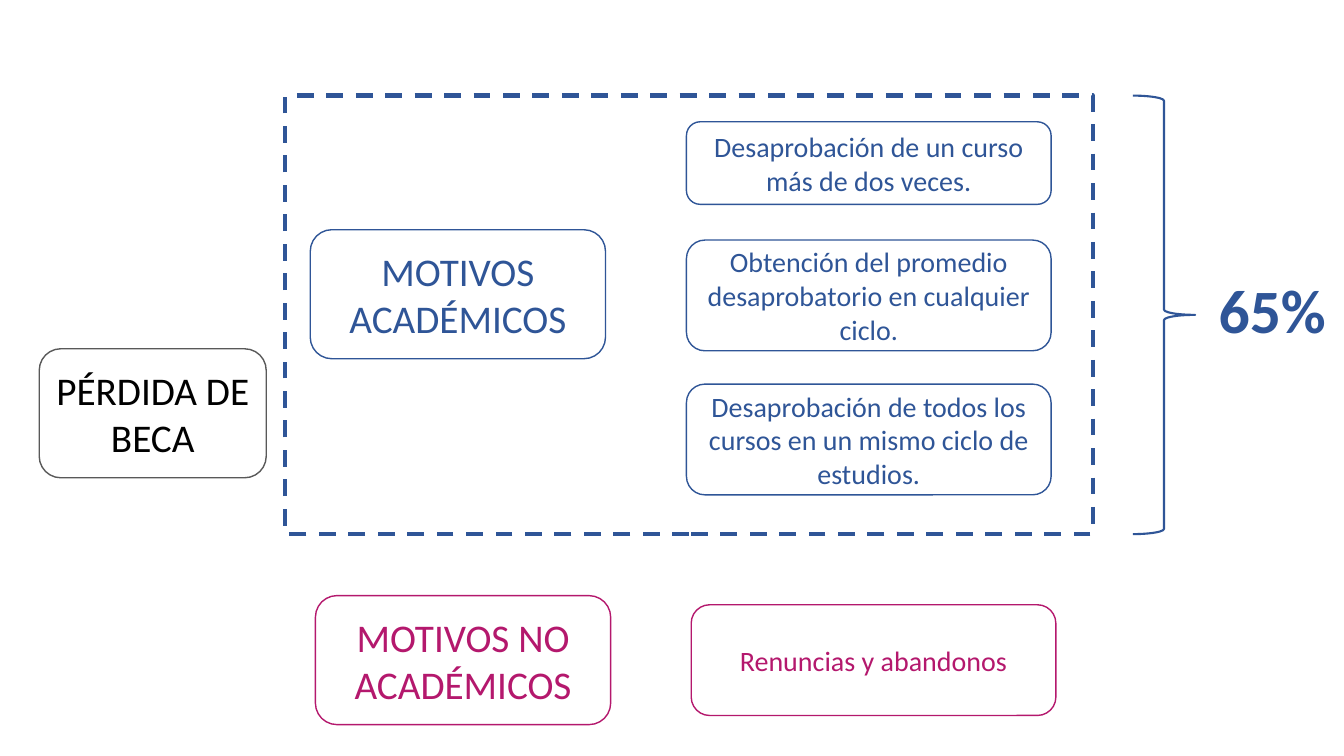
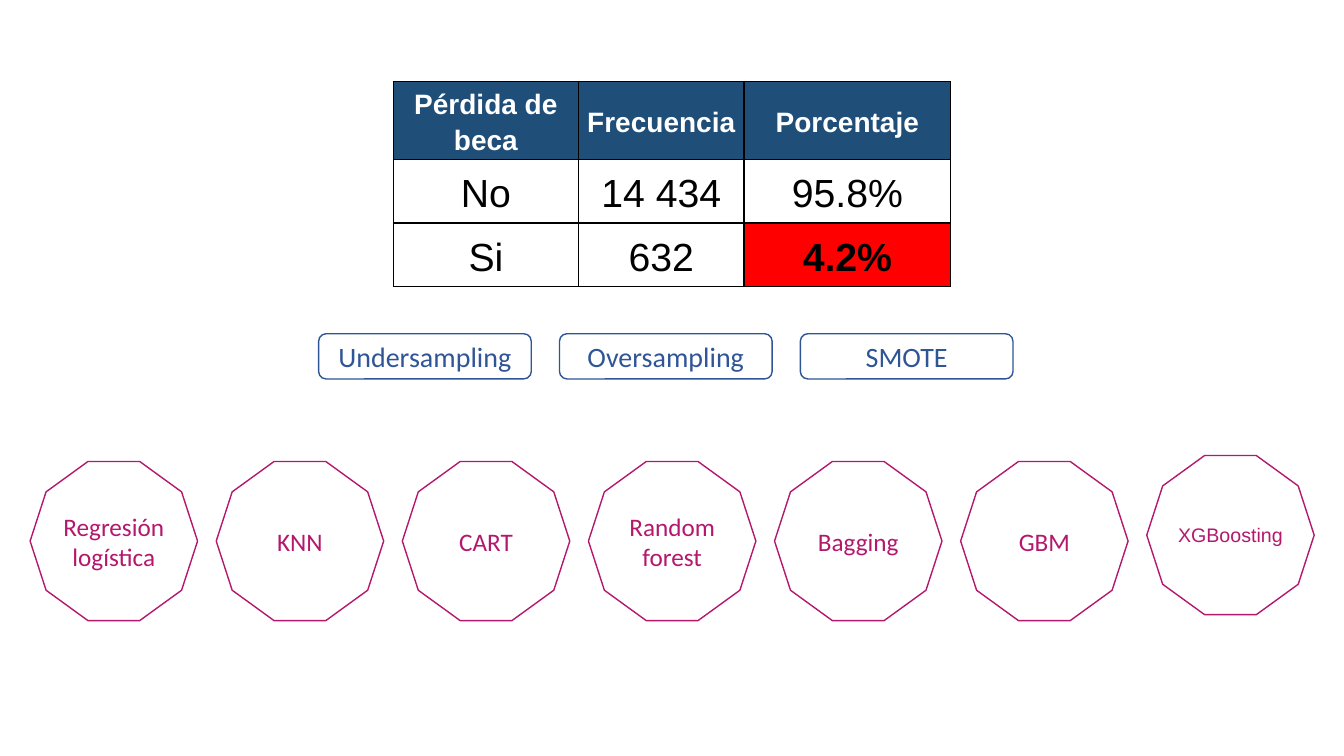
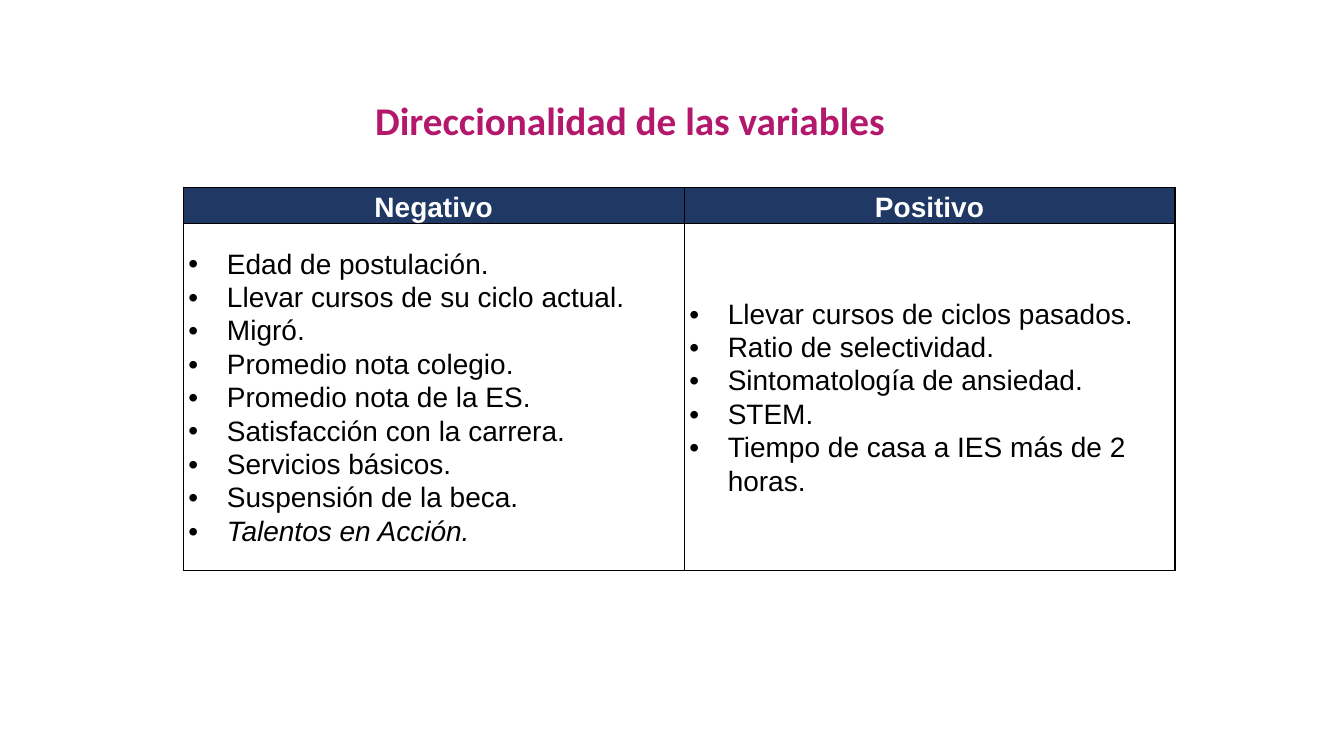
"""Build three slides on scholarship loss: its reasons, the models and the variables."""
from dataclasses import dataclass

from lxml.etree import SubElement
from pptx import Presentation
from pptx.dml.color import RGBColor
from pptx.enum.dml import MSO_LINE
from pptx.enum.shapes import MSO_SHAPE
from pptx.enum.text import MSO_ANCHOR, PP_ALIGN
from pptx.oxml.ns import qn
from pptx.util import Cm, Pt


@dataclass(frozen=True)
class Theme:
    blue: str = "2F5597"
    magenta: str = "B4186D"
    gray: str = "595959"
    black: str = "000000"
    white: str = "FFFFFF"
    red: str = "FF0000"
    frequency_header: str = "1F4E79"
    direction_header: str = "1F3864"
    figure: int = 44
    heading: int = 28
    body: int = 20
    label: int = 18
    small: int = 14
    shape_font: str = "Calibri"
    table_font: str = "Arial"


theme = Theme()


def write_paragraph(paragraph, text, color, font, layout):
    for name, value in layout.items():
        setattr(paragraph, name, value)
    run = paragraph.add_run()
    run.text = text
    for name, value in font.items():
        setattr(run.font, name, value)
    run.font.color.rgb = RGBColor.from_string(color)


def add_box(slide, preset, position, color, text="", size=theme.body, text_color=None,
            font_name=theme.shape_font, line_width=1):
    shape = slide.shapes.add_shape(preset, *map(Cm, position))
    shape.shadow.inherit = False
    shape.fill.background()
    shape.line.color.rgb = RGBColor.from_string(color)
    shape.line.width = Pt(line_width)
    if text:
        shape.text_frame.vertical_anchor = MSO_ANCHOR.MIDDLE
        write_paragraph(shape.text_frame.paragraphs[0], text, text_color or color,
                        {"name": font_name, "size": Pt(size)}, {"alignment": PP_ALIGN.CENTER})
    return shape


presentation = Presentation()
presentation.slide_width = Cm(33.87)
presentation.slide_height = Cm(19.05)
blank_layout = presentation.slide_layouts[6]
reasons_slide, models_slide, variables_slide = (
    presentation.slides.add_slide(blank_layout) for _ in range(3))

rounded = MSO_SHAPE.ROUNDED_RECTANGLE
add_box(reasons_slide, rounded, (0.99, 8.79, 5.72, 3.25), theme.gray,
        "PÉRDIDA DE BECA", theme.heading, theme.black)
add_box(reasons_slide, rounded, (7.95, 15.01, 7.44, 3.25), theme.magenta,
        "MOTIVOS NO ACADÉMICOS", theme.heading)
add_box(reasons_slide, rounded, (17.42, 15.24, 9.19, 2.79), theme.magenta,
        "Renuncias y abandonos")
add_box(reasons_slide, rounded, (7.82, 5.79, 7.44, 3.25), theme.blue,
        "MOTIVOS ACADÉMICOS", theme.heading)
academic_reasons = [
    (3.07, 2.08, "Desaprobación de un curso más de dos veces."),
    (6.05, 2.79, "Obtención del promedio desaprobatorio en cualquier ciclo."),
    (9.68, 2.79, "Desaprobación de todos los cursos en un mismo ciclo de estudios."),
]
for top, height, reason in academic_reasons:
    add_box(reasons_slide, rounded, (17.3, top, 9.19, height), theme.blue, reason)
academic_frame = add_box(reasons_slide, MSO_SHAPE.RECTANGLE, (7.19, 2.41, 20.35, 11.05),
                         theme.blue, line_width=3)
academic_frame.line.dash_style = MSO_LINE.DASH
add_box(reasons_slide, MSO_SHAPE.RIGHT_BRACE, (28.55, 2.41, 1.57, 11.05), theme.blue,
        line_width=1.5)

for index, method in enumerate(["Undersampling", "Oversampling", "SMOTE"]):
    add_box(models_slide, rounded, (8.03 + 6.07 * index, 8.41, 5.36, 1.14), theme.blue, method)
models = ["Regresión logística", "KNN", "CART", "Random forest", "Bagging", "GBM"]
for index, model in enumerate(models):
    add_box(models_slide, MSO_SHAPE.DECAGON, (0.76 + 4.69 * index, 11.63, 4.22, 4.01),
            theme.magenta, model, theme.label)
add_box(models_slide, MSO_SHAPE.DECAGON, (0.76 + 4.69 * len(models), 11.48, 4.22, 4.01),
        theme.magenta, "XGBoosting", theme.small, font_name=theme.table_font)

headlines = [
    (reasons_slide, (30.12, 6.07, 3.89, 3.45), "65%", theme.figure, theme.blue, 1.0),
    (variables_slide, (7.67, 1.73, 16.41, 2.72), "Direccionalidad de las variables",
     theme.heading, theme.magenta, 0.9),
]
for slide, position, text, size, color, spacing in headlines:
    text_frame = slide.shapes.add_textbox(*map(Cm, position)).text_frame
    text_frame.word_wrap = True
    text_frame.vertical_anchor = MSO_ANCHOR.MIDDLE
    write_paragraph(text_frame.paragraphs[0], text, color,
                    {"name": theme.shape_font, "size": Pt(size), "bold": True},
                    {"alignment": PP_ALIGN.CENTER, "line_spacing": spacing})

negative = ["Edad de postulación.", "Llevar cursos de su ciclo actual.", "Migró.",
            "Promedio nota colegio.", "Promedio nota de la ES.", "Satisfacción con la carrera.",
            "Servicios básicos.", "Suspensión de la beca.", "Talentos en Acción."]
positive = ["Llevar cursos de ciclos pasados.", "Ratio de selectividad.",
            "Sintomatología de ansiedad.", "STEM.", "Tiempo de casa a IES más de 2 horas."]
tables = [
    {"slide": models_slide, "origin": (9.91, 2.06), "columns": [4.67, 4.17, 5.21],
     "rows": [1.8, 1.61, 1.61], "inset": 0.18, "spacing": 1.15, "size": theme.heading,
     "header_fill": theme.frequency_header, "header_anchor": MSO_ANCHOR.MIDDLE,
     "bulleted": False,
     "cells": [[["Pérdida de beca"], ["Frecuencia"], ["Porcentaje"]],
               [["No"], ["14 434"], ["95.8%"]],
               [["Si"], ["632"], ["4.2%"]]]},
    {"slide": variables_slide, "origin": (4.62, 4.72), "columns": [12.62, 12.37],
     "rows": [0.91, 8.74], "inset": 0.13, "spacing": 1.07, "size": theme.body,
     "header_fill": theme.direction_header, "header_anchor": MSO_ANCHOR.BOTTOM,
     "bulleted": True,
     "cells": [[["Negativo"], ["Positivo"]], [negative, positive]]},
]
for table_data in tables:
    columns, rows = table_data["columns"], table_data["rows"]
    table = table_data["slide"].shapes.add_table(
        len(rows), len(columns), *map(Cm, table_data["origin"]),
        Cm(sum(columns)), Cm(sum(rows))).table
    for column, width in zip(table.columns, columns):
        column.width = Cm(width)
    for row, height in zip(table.rows, rows):
        row.height = Cm(height)
    for row_index, row_cells in enumerate(table_data["cells"]):
        is_header = row_index == 0
        bulleted = table_data["bulleted"] and not is_header
        for column_index, lines in enumerate(row_cells):
            cell = table.cell(row_index, column_index)
            highlighted = lines == ["4.2%"]
            cell_format = {
                "margin_left": Cm(table_data["inset"]), "margin_right": Cm(table_data["inset"]),
                "margin_top": 0, "margin_bottom": 0,
                "vertical_anchor": table_data["header_anchor"] if is_header
                else MSO_ANCHOR.MIDDLE,
            }
            for name, value in cell_format.items():
                setattr(cell, name, value)
            cell_properties = cell._tc.get_or_add_tcPr()
            for side in ("a:lnL", "a:lnR", "a:lnT", "a:lnB"):
                border = SubElement(cell_properties, qn(side), w=str(Pt(1)))
                border_fill = SubElement(border, qn("a:solidFill"))
                SubElement(border_fill, qn("a:srgbClr"), val=theme.black)
            if is_header or highlighted:
                cell.fill.solid()
                cell.fill.fore_color.rgb = RGBColor.from_string(
                    table_data["header_fill"] if is_header else theme.red)
            else:
                cell.fill.background()
            for line_index, line in enumerate(lines):
                text_frame = cell.text_frame
                paragraph = text_frame.add_paragraph() if line_index else text_frame.paragraphs[0]
                if bulleted:
                    properties = paragraph._p.get_or_add_pPr()
                    properties.set("marL", str(Cm(0.97)))
                    properties.set("indent", str(-Cm(0.97)))
                    SubElement(properties, qn("a:buFont"), typeface=theme.table_font)
                    SubElement(properties, qn("a:buChar"), char="•")
                write_paragraph(
                    paragraph, line, theme.white if is_header else theme.black,
                    {"name": theme.table_font,
                     "size": Pt(theme.body if is_header else table_data["size"]),
                     "bold": is_header or highlighted,
                     "italic": line == "Talentos en Acción."},
                    {"alignment": PP_ALIGN.LEFT if bulleted else PP_ALIGN.CENTER,
                     "line_spacing": table_data["spacing"],
                     "space_after": Pt(0 if bulleted else 8)})

presentation.save("out.pptx")
